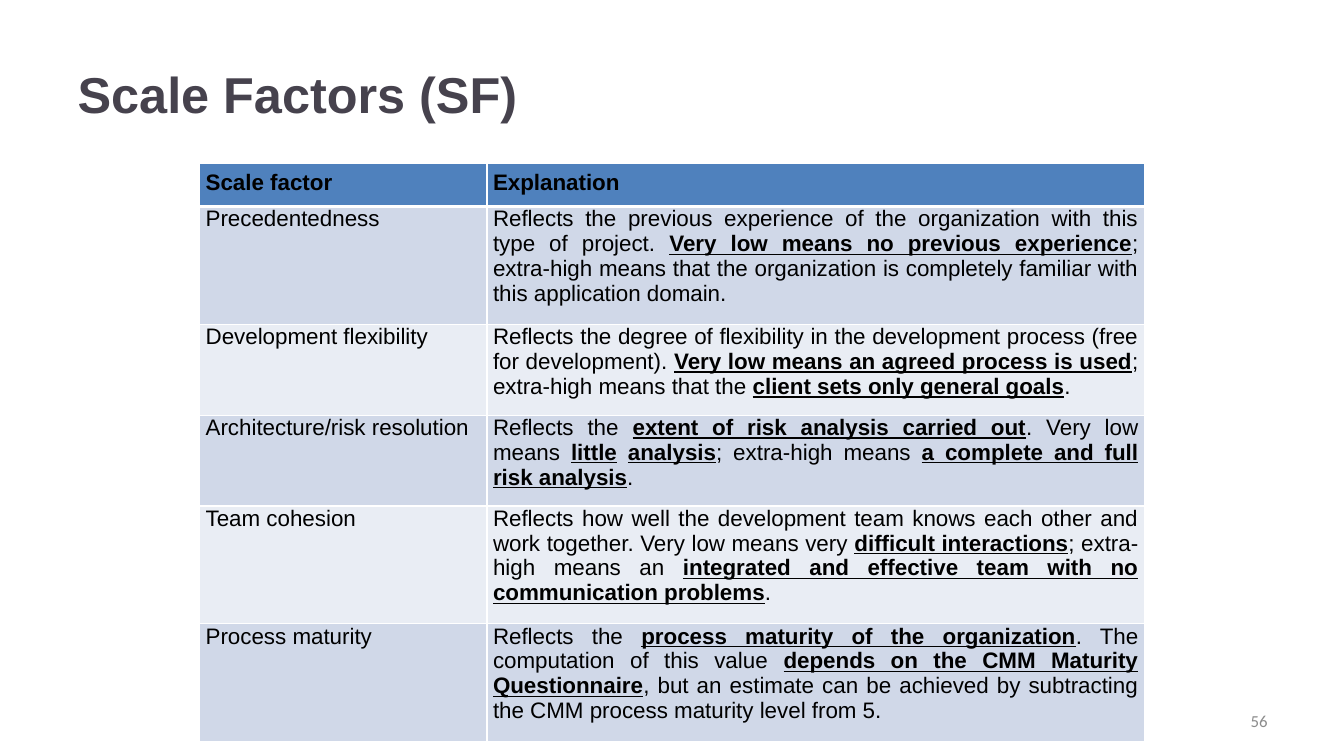
"""Build the Scale Factors slide with its table of explanations."""
from lxml import etree
from pptx import Presentation
from pptx.dml.color import RGBColor
from pptx.enum.text import MSO_ANCHOR, PP_ALIGN
from pptx.oxml.ns import qn
from pptx.util import Pt

PX = 9144
JUSTIFY, RIGHT = PP_ALIGN.JUSTIFY, PP_ALIGN.RIGHT
MIDDLE = MSO_ANCHOR.MIDDLE
COLORS = {"title": "46424D", "text": "000000", "number": "8C8C8C", "border": "FFFFFF",
          "header": "4F81BD", "odd": "D0D8E8", "even": "E9EDF4"}
COLUMNS = [285, 652]
HEIGHTS = [43, 117, 90, 90, 117, 117]
ROWS = [
    ("Scale factor", "Explanation"),
    ("Precedentedness",
     "Reflects the previous experience of the organization with this type of project. "
     "*Very low means no previous experience*; extra-high means that the organization "
     "is completely familiar with this application domain."),
    ("Development flexibility",
     "Reflects the degree of flexibility in the development process (free for development). "
     "*Very low means an agreed process is used*; extra-high means that the "
     "*client sets only general goals*."),
    ("Architecture/risk resolution",
     "Reflects the *extent of risk analysis carried out*. Very low means *little* *analysis*; "
     "extra-high means *a complete and full risk analysis*."),
    ("Team cohesion",
     "Reflects how well the development team knows each other and work together. "
     "Very low means very *difficult interactions*; extra-high means an "
     "*integrated and effective team with no communication problems*."),
    ("Process maturity",
     "Reflects the *process maturity of the organization*. The computation of this value "
     "*depends on the CMM Maturity Questionnaire*, but an estimate can be achieved by "
     "subtracting the CMM process maturity level from 5."),
]


def style(r, size, color, bold=False, name="Arial"):
    r.font.size = Pt(size)
    r.font.name = name
    r.font.bold = bold
    r.font.color.rgb = RGBColor.from_string(COLORS[color])


def add_border(cell, side, width):
    ln = etree.SubElement(cell._tc.get_or_add_tcPr(), qn(f"a:ln{side}"), w=str(Pt(width)))
    fill = etree.SubElement(ln, qn("a:solidFill"))
    etree.SubElement(fill, qn("a:srgbClr"), val=COLORS["border"])


prs = Presentation()
prs.slide_width, prs.slide_height = 1333 * PX, 750 * PX
s = prs.slides.add_slide(prs.slide_layouts[5])

title = s.shapes.title
title.left, title.top, title.width, title.height = 67 * PX, 30 * PX, 1063 * PX, 125 * PX
tf = title.text_frame
tf.text = "Scale Factors (SF)"
tf.vertical_anchor = MIDDLE
p = tf.paragraphs[0]
p.alignment = PP_ALIGN.LEFT
style(p.runs[0], 36, "title", bold=True)

table = s.shapes.add_table(len(ROWS), len(COLUMNS), 198 * PX, 162 * PX,
                           sum(COLUMNS) * PX, sum(HEIGHTS) * PX).table
for column, width in zip(table.columns, COLUMNS):
    column.width = width * PX
for i, (height, texts) in enumerate(zip(HEIGHTS, ROWS)):
    header = i == 0
    table.rows[i].height = height * PX
    for j, text in enumerate(texts):
        cell = table.cell(i, j)
        cell.margin_left = cell.margin_right = 6 * PX
        cell.margin_top = 7 * PX if header else 0
        cell.margin_bottom = 7 * PX
        for side in "LRTB":
            add_border(cell, side, 3 if header and side == "B" else 1)
        cell.fill.solid()
        shade = "header" if header else "odd" if i % 2 else "even"
        cell.fill.fore_color.rgb = RGBColor.from_string(COLORS[shade])
        p = cell.text_frame.paragraphs[0]
        p.alignment = JUSTIFY
        for k, part in enumerate(text.split("*")):
            key_phrase = k % 2 == 1
            r = p.add_run()
            r.text = part
            style(r, 16, "text", bold=header or key_phrase)
            r.font.underline = key_phrase

number = s.shapes.add_textbox(956 * PX, 695 * PX, 311 * PX, 40 * PX)
tf = number.text_frame
tf.word_wrap = True
tf.vertical_anchor = MIDDLE
tf.text = "56"
p = tf.paragraphs[0]
p.alignment = RIGHT
style(p.runs[0], 12, "number", name="Calibri")

prs.save("out.pptx")
